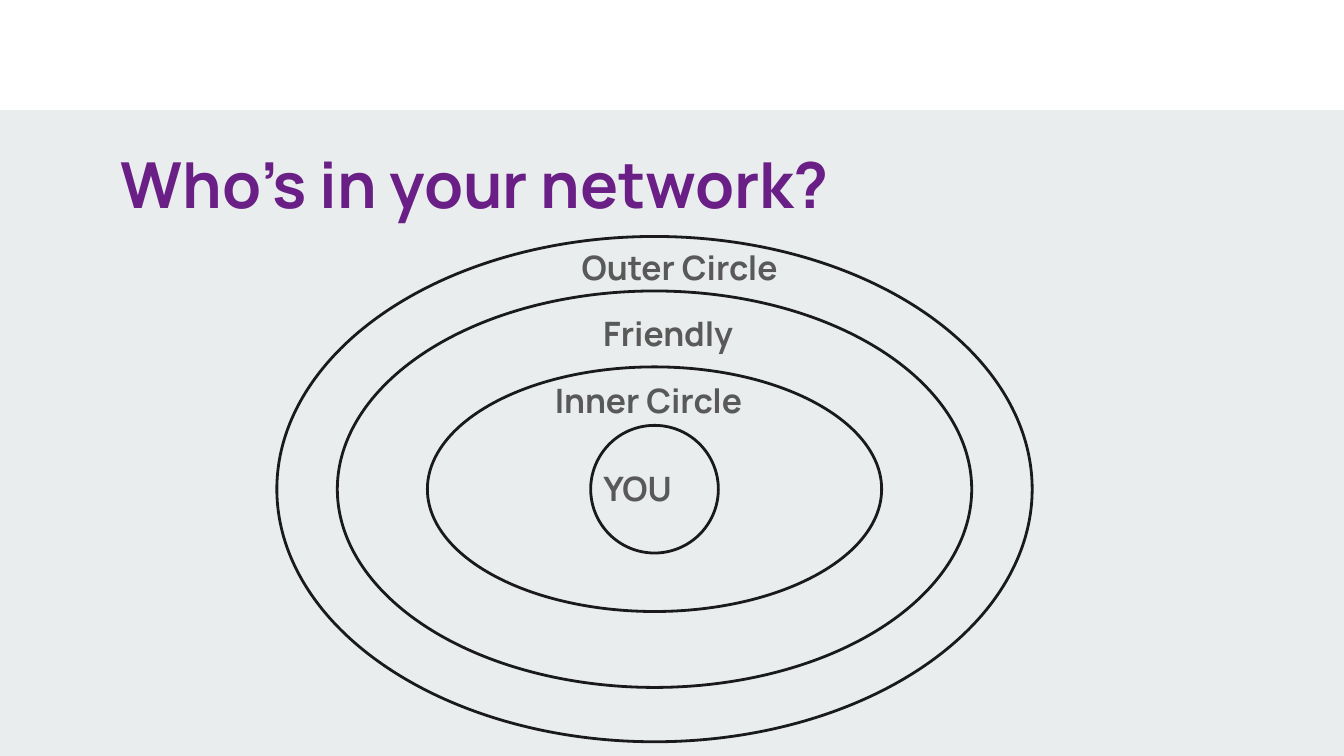
from collections import namedtuple

from pptx import Presentation
from pptx.dml.color import RGBColor
from pptx.enum.shapes import MSO_SHAPE
from pptx.enum.text import MSO_ANCHOR
from pptx.util import Inches, Pt

OVAL, RECTANGLE = MSO_SHAPE.OVAL, MSO_SHAPE.RECTANGLE
TOP = MSO_ANCHOR.TOP

COLOURS = {"ground": "E9EDEE", "band": "FFFFFF", "title": "6A1F86",
           "label": "595959", "outline": "1A1A1A"}
FONT = "Manrope"
WIDTH = 10
HEIGHT = WIDTH * 9 / 16

Box = namedtuple("Box", "left top width height")

# Ring width and height, from the outside in
RINGS = [(5.62, 3.76), (4.72, 2.95), (3.38, 1.82), (0.95, 0.95)]
# Label text, with its box measured from the corner of the ring area
RING_LABEL = (2.27, 0.35)
LABELS = [("YOU", Box(2.33, 1.62, 5.42, 0.5)),
          ("Inner Circle", Box(1.97, 0.97, *RING_LABEL)),
          ("Friendly", Box(2.33, 0.47, *RING_LABEL)),
          ("Outer Circle", Box(2.17, -0.02, *RING_LABEL))]


def colour(name):
    return RGBColor.from_string(COLOURS[name])


def inches(box):
    return [Inches(length) for length in box]


def add_plain_shape(page, kind, box, fill, outline=None):
    shape = page.shapes.add_shape(kind, *inches(box))
    shape.shadow.inherit = False
    shape.fill.solid()
    shape.fill.fore_color.rgb = colour(fill)
    if outline:
        shape.line.color.rgb = colour(outline)
        shape.line.width = Pt(1.5)
    else:
        shape.line.fill.background()


def add_text(page, box, text, size, tint):
    frame = page.shapes.add_textbox(*inches(box)).text_frame
    frame.word_wrap = True
    frame.vertical_anchor = TOP
    frame.margin_left = frame.margin_right = Inches(0.1)
    frame.margin_top = frame.margin_bottom = Inches(0.1)
    para = frame.paragraphs[0]
    para.text = text
    para.font.name = FONT
    para.font.size = Pt(size)
    para.font.bold = True
    para.font.color.rgb = colour(tint)


def add_header(page, box):
    """Place the white band across the top of the box and the title below it."""
    band = Box(box.left, box.top, box.width, 0.82)
    add_plain_shape(page, RECTANGLE, band, "band")
    title = Box(box.left + 0.8, box.top + 0.98, box.width - 1.59,
                box.height - 0.98)
    add_text(page, title, "Who’s in your network?", 34, "title")


def add_network(page, box):
    """Nest the rings around the middle of the box, then label them."""
    middle_x = box.left + box.width / 2
    middle_y = box.top + box.height / 2
    for width, height in RINGS:
        ring = Box(middle_x - width / 2, middle_y - height / 2, width, height)
        add_plain_shape(page, OVAL, ring, "ground", "outline")
    for text, area in LABELS:
        label = area._replace(left=box.left + area.left,
                              top=box.top + area.top)
        add_text(page, label, text, 18, "label")


def main():
    deck = Presentation()
    deck.slide_width, deck.slide_height = Inches(WIDTH), Inches(HEIGHT)
    page = deck.slides.add_slide(deck.slide_layouts[6])
    page.background.fill.solid()
    page.background.fill.fore_color.rgb = colour("ground")
    add_header(page, Box(0, 0, WIDTH, 2.24))
    add_network(page, Box(2.06, 1.76, *RINGS[0]))
    deck.save("out.pptx")


if __name__ == "__main__":
    main()
